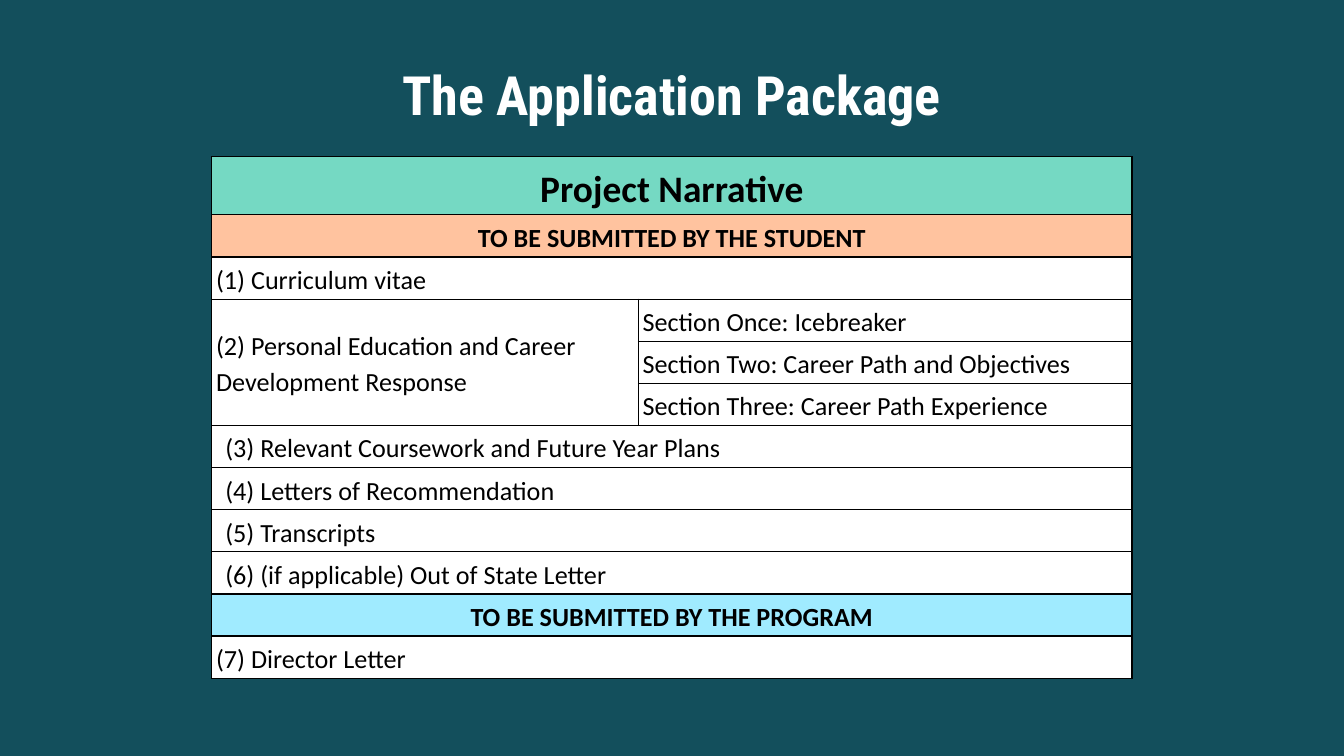
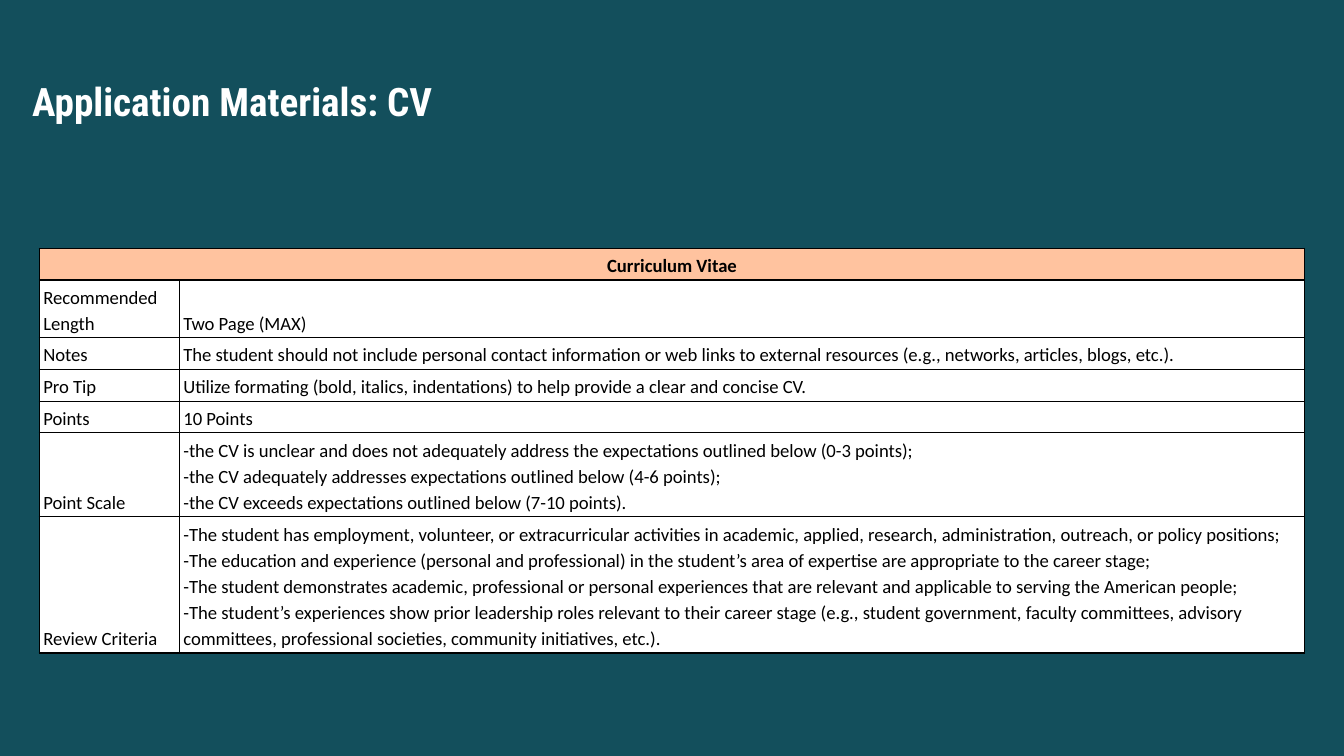
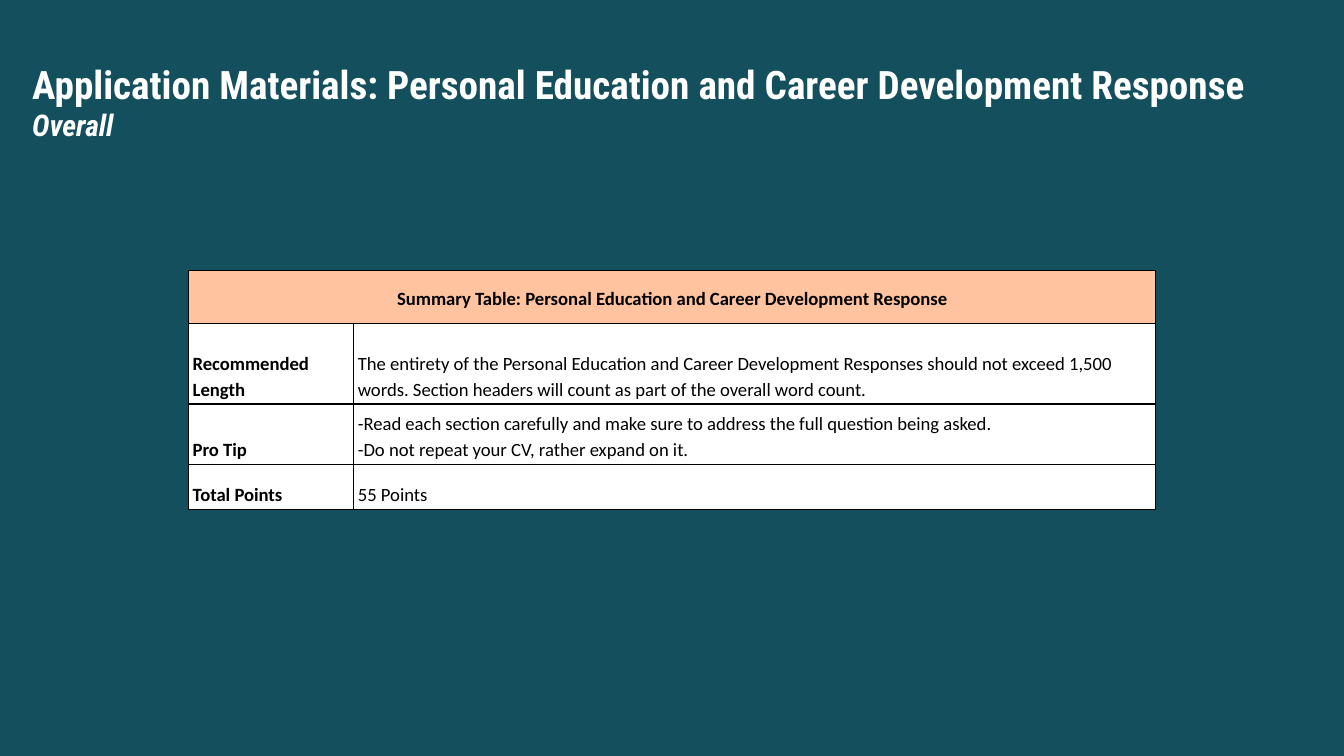
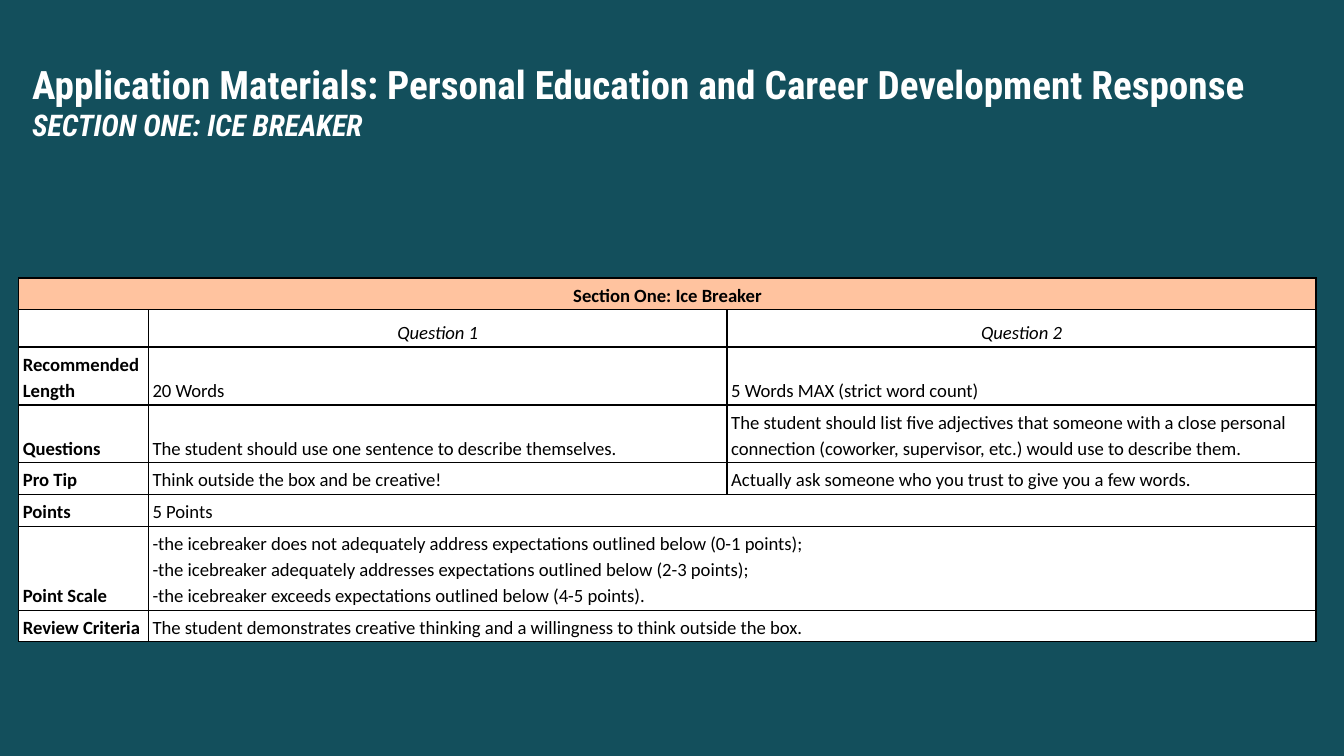
from dataclasses import dataclass
from typing import Optional

from lxml import etree
from pptx import Presentation
from pptx.dml.color import RGBColor
from pptx.enum import text as t
from pptx.oxml import ns
from pptx.util import Pt

COLORS = {
    "background": "134F5C", "title": "FFFFFF", "ink": "000000", "plain": "FFFFFF",
    "narrative": "75D9C3", "student": "FFC39F", "program": "A0EBFF",
}
TITLE_FONT, TABLE_FONT = "Roboto Condensed", "Calibri"
TITLE_ONLY = 5
LEFT, CENTER = t.PP_ALIGN.LEFT, t.PP_ALIGN.CENTER
MIDDLE, BOTTOM = t.MSO_ANCHOR.MIDDLE, t.MSO_ANCHOR.BOTTOM


@dataclass
class Cell:
    """One table cell; each line of its text is a paragraph."""
    text: str = ""
    fill: str = "plain"
    bold: bool = False
    italic: bool = False
    align: int = LEFT
    anchor: int = BOTTOM
    rows: int = 1
    cols: int = 1
    inset: float = 2.25
    size: Optional[float] = None


@dataclass
class Grid:
    """Place, track sizes and cells of a table; None marks a merged cell."""
    left: float
    top: float
    widths: list[float]
    heights: list[float]
    cells: list[list[Optional[Cell]]]
    size: float = 10


@dataclass
class Title:
    text: str
    left: float = 10
    top: float = 29.5
    width: float = 681
    height: float = 49.5
    size: float = 21
    align: int = LEFT
    subtitle: str = ""


def rgb(name: str) -> RGBColor:
    return RGBColor.from_string(COLORS[name])


def add_span(para, words: str, font: str, size: float, color: str,
             bold: bool, italic: bool = False) -> None:
    span = para.add_run()
    span.text = words
    span.font.name = font
    span.font.size = Pt(size)
    span.font.color.rgb = rgb(color)
    span.font.bold = bold
    span.font.italic = italic


def add_border(cell) -> None:
    properties = cell._tc.get_or_add_tcPr()
    for side in ("lnL", "lnR", "lnT", "lnB"):
        line = etree.SubElement(properties, ns.qn(f"a:{side}"), w=str(Pt(0.75)))
        paint = etree.SubElement(line, ns.qn("a:solidFill"))
        etree.SubElement(paint, ns.qn("a:srgbClr"), val=COLORS["ink"])


def fill_cell(target, cell: Cell, size: float) -> None:
    target.fill.solid()
    target.fill.fore_color.rgb = rgb(cell.fill)
    target.vertical_anchor = cell.anchor
    target.margin_left = target.margin_right = Pt(cell.inset)
    target.margin_top = target.margin_bottom = Pt(1.5)
    frame = target.text_frame
    for index, line in enumerate(cell.text.split("\n")):
        para = frame.add_paragraph() if index else frame.paragraphs[0]
        para.alignment = cell.align
        para.line_spacing = 1.15
        if line:
            add_span(para, line, TABLE_FONT, cell.size or size, "ink", cell.bold, cell.italic)
        else:
            # Keeps an empty cell from taking the default text height.
            etree.SubElement(para._p, ns.qn("a:endParaRPr"), sz=str(int(size * 100)))


def add_grid(page, grid: Grid) -> None:
    table = page.shapes.add_table(
        len(grid.heights), len(grid.widths), Pt(grid.left), Pt(grid.top),
        Pt(sum(grid.widths)), Pt(sum(grid.heights))).table
    table.first_row = table.horz_banding = False
    for column, width in zip(table.columns, grid.widths):
        column.width = Pt(width)
    for row, height in zip(table.rows, grid.heights):
        row.height = Pt(height)
    for r, row in enumerate(grid.cells):
        for c, cell in enumerate(row):
            target = table.cell(r, c)
            add_border(target)
            if cell is None:
                continue
            fill_cell(target, cell, grid.size)
            if cell.rows > 1 or cell.cols > 1:
                target.merge(table.cell(r + cell.rows - 1, c + cell.cols - 1))


def set_title(page, title: Title) -> None:
    box = page.shapes.title
    box.left, box.top = Pt(title.left), Pt(title.top)
    box.width, box.height = Pt(title.width), Pt(title.height)
    frame = box.text_frame
    frame.auto_size = t.MSO_AUTO_SIZE.NONE
    frame.word_wrap = True
    frame.vertical_anchor = MIDDLE
    frame.margin_left = frame.margin_right = Pt(7.2)
    frame.margin_top = frame.margin_bottom = Pt(7.2)
    para = frame.paragraphs[0]
    para.alignment = title.align
    add_span(para, title.text, TITLE_FONT, title.size, "title", True)
    if title.subtitle:
        para = frame.add_paragraph()
        para.alignment = title.align
        add_span(para, title.subtitle, TITLE_FONT, 16, "title", True, True)


def band(words: str, fill: str = "student", cols: int = 2,
         anchor: int = BOTTOM, size: Optional[float] = None) -> list[Optional[Cell]]:
    """Row with one bold centred heading across all columns."""
    heading = Cell(words, fill, bold=True, align=CENTER, anchor=anchor, cols=cols, size=size)
    return [heading] + [None] * (cols - 1)


def wide(words: str, inset: float = 2.25) -> list[Optional[Cell]]:
    return [Cell(words, cols=2, inset=inset), None]


def entry(label: str, *answers: str, bold: bool = True, cols: int = 1) -> list[Optional[Cell]]:
    """Row with a label and its answers, the last one spanning cols columns."""
    row = [Cell(label, bold=bold)] + [Cell(answer) for answer in answers]
    row[-1].cols = cols
    return row + [None] * (cols - 1)


def section(words: str) -> Cell:
    return Cell(words, anchor=MIDDLE)


PACKAGE = Grid(113.5, 84, [228.5, 264.5], [31] + [22.5] * 11, [
    band("Project Narrative", "narrative", size=20),
    band("TO BE SUBMITTED BY THE STUDENT"),
    wide("(1) Curriculum vitae"),
    [Cell("(2) Personal Education and Career Development Response", anchor=MIDDLE, rows=3),
     section("Section Once: Icebreaker")],
    [None, section("Section Two: Career Path and Objectives")],
    [None, section("Section Three: Career Path Experience")],
    wide("(3) Relevant Coursework and Future Year Plans", 7.2),
    wide("(4) Letters of Recommendation", 7.2),
    wide("(5) Transcripts", 7.2),
    wide("(6) (if applicable) Out of State Letter", 7.2),
    band("TO BE SUBMITTED BY THE PROGRAM", "program"),
    wide("(7) Director Letter"),
], size=14)

VITAE = Grid(21, 133, [75, 603], [17, 31, 17, 17, 17, 45, 73], [
    band("Curriculum Vitae"),
    entry("Recommended Length", "Two Page (MAX)", bold=False),
    entry("Notes", "The student should not include personal contact information or web links "
          "to external resources (e.g., networks, articles, blogs, etc.).", bold=False),
    entry("Pro Tip", "Utilize formating (bold, italics, indentations) to help provide "
          "a clear and concise CV.", bold=False),
    entry("Points", "10 Points", bold=False),
    entry("Point Scale",
          "-the CV is unclear and does not adequately address the expectations outlined below "
          "(0-3 points);\n"
          "-the CV adequately addresses expectations outlined below (4-6 points);\n"
          "-the CV exceeds expectations outlined below (7-10 points).", bold=False),
    entry("Review Criteria",
          "-The student has employment, volunteer, or extracurricular activities in academic, "
          "applied, research, administration, outreach, or policy positions;\n"
          "-The education and experience (personal and professional) in the student’s area of "
          "expertise are appropriate to the career stage;\n"
          "-The student demonstrates academic, professional or personal experiences that are "
          "relevant and applicable to serving the American people;\n"
          "-The student’s experiences show prior leadership roles relevant to their career stage "
          "(e.g., student government, faculty committees, advisory committees, professional "
          "societies, community initiatives, etc.).", bold=False),
])

SUMMARY = Grid(101, 145, [88.5, 429.5], [28.5, 43, 32.5, 24], [
    band("Summary Table: Personal Education and Career Development Response", anchor=MIDDLE),
    entry("Recommended Length", "The entirety of the Personal Education and Career Development "
          "Responses should not exceed 1,500 words. Section headers will count as part of the "
          "overall word count."),
    entry("Pro Tip", "-Read each section carefully and make sure to address the full question "
          "being asked.\n-Do not repeat your CV, rather expand on it."),
    entry("Total Points", "55 Points"),
])

ICE_BREAKER = Grid(10, 149, [69.5, 310, 315.5], [17, 20, 31, 31, 17, 17, 45, 17], [
    band("Section One: Ice Breaker", cols=3),
    [Cell()] + [Cell(f"Question {n}", italic=True, align=CENTER) for n in (1, 2)],
    entry("Recommended Length", "20 Words", "5 Words MAX (strict word count)"),
    entry("Questions", "The student should use one sentence to describe themselves.",
          "The student should list five adjectives that someone with a close personal connection "
          "(coworker, supervisor, etc.) would use to describe them."),
    entry("Pro Tip", "Think outside the box and be creative!",
          "Actually ask someone who you trust to give you a few words."),
    entry("Points", "5 Points", cols=2),
    entry("Point Scale",
          "-the icebreaker does not adequately address expectations outlined below (0-1 points);\n"
          "-the icebreaker adequately addresses expectations outlined below (2-3 points);\n"
          "-the icebreaker exceeds expectations outlined below (4-5 points).", cols=2),
    entry("Review Criteria", "The student demonstrates creative thinking and a willingness to "
          "think outside the box.", cols=2),
])

RESPONSE = "Application Materials: Personal Education and Career Development Response"
PAGES = [
    (Title("The Application Package", 36, 16.5, 648, 68, 29, CENTER), PACKAGE),
    (Title("Application Materials: CV", width=397), VITAE),
    (Title(RESPONSE, subtitle="Overall"), SUMMARY),
    (Title(RESPONSE, subtitle="SECTION ONE: ICE BREAKER"), ICE_BREAKER),
]


def main() -> None:
    deck = Presentation()
    deck.slide_width, deck.slide_height = Pt(720), Pt(405)
    backdrop = deck.slide_master.background.fill
    backdrop.solid()
    backdrop.fore_color.rgb = rgb("background")
    for title, grid in PAGES:
        page = deck.slides.add_slide(deck.slide_layouts[TITLE_ONLY])
        set_title(page, title)
        add_grid(page, grid)
    deck.save("out.pptx")


if __name__ == "__main__":
    main()
